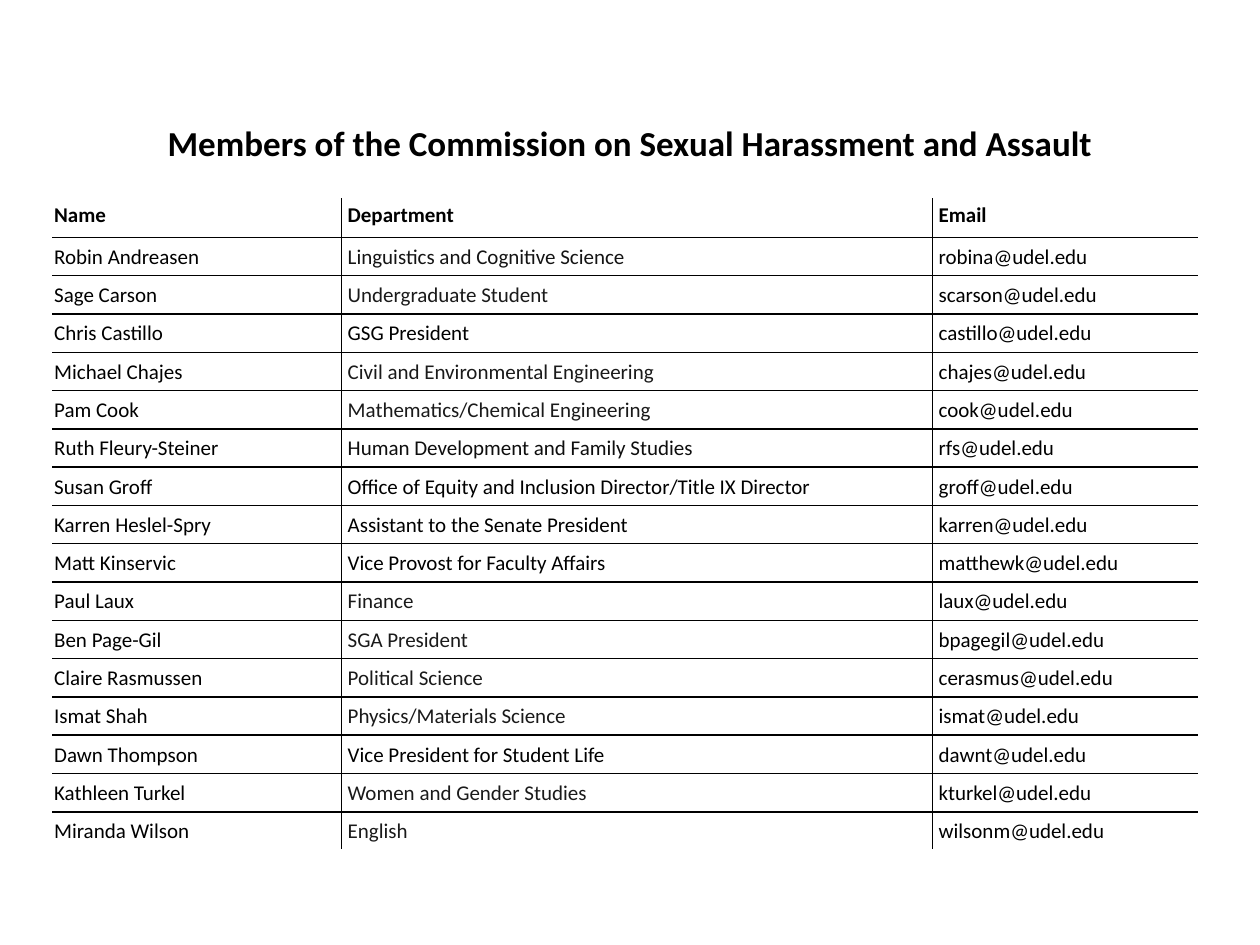
from lxml import etree
from pptx import Presentation
from pptx import util as u
from pptx.dml.color import RGBColor
from pptx.enum import text
from pptx.oxml import ns

BLACK = RGBColor(0x00, 0x00, 0x00)
SOFT_BLACK = RGBColor(0x1A, 0x1A, 0x1A)
LINGUISTICS_BLACK = RGBColor(0x14, 0x14, 0x14)
FAMILY_BLACK = RGBColor(0x0E, 0x0E, 0x0E)

HEADINGS = ("Name", "Department", "Email")
MEMBERS = [
    ("Robin Andreasen", "Linguistics and Cognitive Science", "robina", LINGUISTICS_BLACK),
    ("Sage Carson", "Undergraduate Student", "scarson", SOFT_BLACK),
    ("Chris Castillo", "GSG President", "castillo", BLACK),
    ("Michael Chajes", "Civil and Environmental Engineering", "chajes", SOFT_BLACK),
    ("Pam Cook", "Mathematics/Chemical Engineering", "cook", SOFT_BLACK),
    ("Ruth Fleury-Steiner", "Human Development and Family Studies", "rfs", FAMILY_BLACK),
    ("Susan Groff", "Office of Equity and Inclusion Director/Title IX Director", "groff", BLACK),
    ("Karren Heslel-Spry", "Assistant to the Senate President", "karren", BLACK),
    ("Matt Kinservic", "Vice Provost for Faculty Affairs", "matthewk", BLACK),
    ("Paul Laux", "Finance", "laux", SOFT_BLACK),
    ("Ben Page-Gil", "SGA President", "bpagegil", SOFT_BLACK),
    ("Claire Rasmussen", "Political Science", "cerasmus", SOFT_BLACK),
    ("Ismat Shah", "Physics/Materials Science", "ismat", SOFT_BLACK),
    ("Dawn Thompson", "Vice President for Student Life", "dawnt", BLACK),
    ("Kathleen Turkel", "Women and Gender Studies", "kturkel", SOFT_BLACK),
    ("Miranda Wilson", "English", "wilsonm", SOFT_BLACK),
]


def set_values(target, values):
    for name, value in values.items():
        setattr(target, name, value)


class MemberSlide:
    font_name = "Calibri"
    row_height = u.Inches(5.17 / 17)
    line_width = u.Pt(1)

    def __init__(self, presentation):
        self.slide = presentation.slides.add_slide(presentation.slide_layouts[5])

    def format_text(self, paragraph, size, color=BLACK, bold=False):
        set_values(paragraph.font, {"name": self.font_name, "size": u.Pt(size), "bold": bold})
        paragraph.font.color.rgb = color

    def title(self, words, left, top, width, height):
        shape = self.slide.shapes.title
        set_values(shape, {"left": u.Inches(left), "top": u.Inches(top),
                           "width": u.Inches(width), "height": u.Inches(height)})
        frame = shape.text_frame
        frame.text = words
        set_values(frame, {"word_wrap": True, "auto_size": text.MSO_AUTO_SIZE.NONE,
                           "vertical_anchor": text.MSO_ANCHOR.MIDDLE,
                           "margin_bottom": u.Inches(0.38)})
        paragraph = frame.paragraphs[0]
        paragraph.alignment = text.PP_ALIGN.CENTER
        self.format_text(paragraph, 20, bold=True)

    def border(self, cell, sides):
        """Draw the named sides, given in the order L, R, T, B."""
        properties = cell._tc.get_or_add_tcPr()
        for side in sides:
            line = etree.SubElement(properties, ns.qn(f"a:ln{side}"), w=str(self.line_width))
            fill = etree.SubElement(line, ns.qn("a:solidFill"))
            etree.SubElement(fill, ns.qn("a:srgbClr"), val=str(BLACK))

    def cell(self, cell, words, color, header, first_column, sides):
        self.border(cell, sides)
        cell.fill.background()
        cell.text = words
        set_values(cell, {
            "margin_left": u.Inches(0.01 if first_column else 0.05),
            "margin_right": u.Inches(0.01),
            "margin_top": u.Inches(0.01),
            "margin_bottom": u.Inches(0.07 if header else 0),
            "vertical_anchor": text.MSO_ANCHOR.BOTTOM if header else text.MSO_ANCHOR.MIDDLE,
        })
        self.format_text(cell.text_frame.paragraphs[0], 12, color, bold=header)

    def table(self, rows, department_colors, left, top, widths):
        """Rule only the inner grid; the outer edges stay open."""
        frame = self.slide.shapes.add_table(
            len(rows), len(widths), u.Inches(left), u.Inches(top),
            u.Inches(sum(widths)), self.row_height * len(rows))
        table = frame.table
        set_values(table, {"first_row": False, "horz_banding": False})
        for column, width in zip(table.columns, widths):
            column.width = u.Inches(width)
        for i, row in enumerate(rows):
            table.rows[i].height = self.row_height
            for j, words in enumerate(row):
                inner = {"L": j > 0, "R": j < len(row) - 1, "T": i > 0, "B": i < len(rows) - 1}
                color = department_colors[i] if j == 1 else BLACK
                self.cell(table.cell(i, j), words, color, i == 0, j == 0,
                          [side for side, drawn in inner.items() if drawn])


def main():
    presentation = Presentation()
    set_values(presentation, {"slide_width": u.Inches(10), "slide_height": u.Inches(7.5)})
    page = MemberSlide(presentation)
    page.title("Members of the Commission on Sexual Harassment and Assault", 0.5, 0.67, 9, 1.25)
    rows = [HEADINGS] + [(name, department, f"{user}@udel.edu")
                         for name, department, user, _ in MEMBERS]
    colors = [BLACK] + [member[-1] for member in MEMBERS]
    page.table(rows, colors, 0.42, 1.58, (2.29, 4.69, 2.1))
    presentation.save("out.pptx")


if __name__ == "__main__":
    main()
